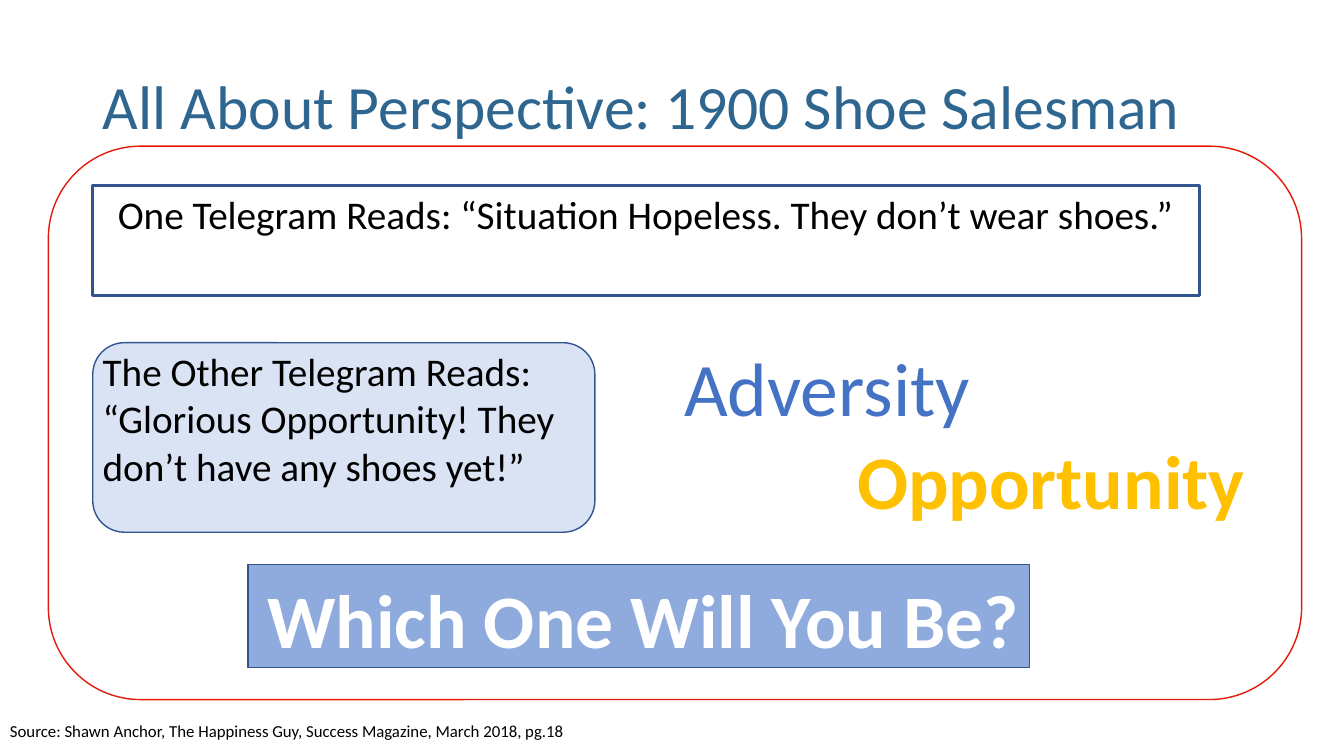
from pptx import Presentation
from pptx.dml.color import RGBColor
from pptx.enum.shapes import MSO_SHAPE as SHAPE
from pptx.enum.text import MSO_ANCHOR as ANCHOR, MSO_AUTO_SIZE as AUTO, PP_ALIGN as ALIGN
from pptx.util import Inches, Pt

BLACK = RGBColor(0x00, 0x00, 0x00)
WHITE = RGBColor(0xFF, 0xFF, 0xFF)
TEAL = RGBColor(0x2F, 0x66, 0x90)
NAVY = RGBColor(0x32, 0x54, 0x91)
BLUE = RGBColor(0x44, 0x72, 0xC4)
MID_BLUE = RGBColor(0x8F, 0xAA, 0xDC)
PALE_BLUE = RGBColor(0xDA, 0xE3, 0xF3)
GOLD = RGBColor(0xFF, 0xC0, 0x00)
RED = RGBColor(0xE5, 0x19, 0x09)


def add_panel(kind, box, fill, line, width):
    sp = s.shapes.add_shape(kind, *map(Inches, box))
    sp.shadow.inherit = False
    if fill is None:
        sp.fill.background()
    else:
        sp.fill.solid()
        sp.fill.fore_color.rgb = fill
    sp.line.color.rgb = line
    sp.line.width = Pt(width)


def set_text(sp, text, size, color, bold=False, align=ALIGN.LEFT):
    p = sp.text_frame.paragraphs[0]
    p.text = text
    p.alignment = align
    p.font.name = "Calibri"
    p.font.size = Pt(size)
    p.font.bold = bold
    p.font.color.rgb = color


prs = Presentation()
prs.slide_width = Inches(13.33)
prs.slide_height = Inches(7.5)
s = prs.slides.add_slide(prs.slide_layouts[5])

# Title
title = s.shapes.title
title.left, title.top, title.width, title.height = map(Inches, (0.92, 0.36, 11.5, 1.45))
title.text_frame.vertical_anchor = ANCHOR.MIDDLE
title.text_frame.auto_size = AUTO.NONE
set_text(title, "All About Perspective: 1900 Shoe Salesman", 44, TEAL)
title.text_frame.paragraphs[0].line_spacing = 0.9

# Panels: outer frame, question, second telegram, first telegram
for panel in (
    (SHAPE.ROUNDED_RECTANGLE, (0.48, 1.45, 12.43, 5.49), None, RED, 1),
    (SHAPE.RECTANGLE, (2.46, 5.6, 7.75, 1.02), MID_BLUE, NAVY, 1),
    (SHAPE.ROUNDED_RECTANGLE, (0.92, 3.4, 4.98, 1.88), PALE_BLUE, NAVY, 1),
    (SHAPE.RECTANGLE, (0.92, 1.84, 10.98, 1.09), None, NAVY, 2.25),
):
    add_panel(*panel)

# Telegrams and source line
for text, box, size in (
    ("One Telegram Reads: “Situation Hopeless. They don’t wear shoes.”",
     (1.07, 1.84, 10.98, 0.88), 28),
    ("The Other Telegram Reads: “Glorious Opportunity! They don’t have any shoes yet!”",
     (0.92, 3.4, 5.14, 1.82), 28),
    ("Source: Shawn Anchor, The Happiness Guy, Success Magazine, March 2018, pg.18",
     (0, 7.1, 9.86, 0.3), 12),
):
    sp = s.shapes.add_textbox(*map(Inches, box))
    sp.text_frame.word_wrap = True
    set_text(sp, text, size, BLACK)

# Large display words
for text, box, color, bold in (
    ("Adversity", (6.67, 3.33, 3.07, 1.01), BLUE, False),
    ("Opportunity ", (8.38, 4.26, 4.26, 1.01), GOLD, True),
    ("Which One Will You Be?", (2.51, 5.63, 7.74, 1.01), WHITE, True),
):
    sp = s.shapes.add_textbox(*map(Inches, box))
    sp.text_frame.word_wrap = False
    set_text(sp, text, 54, color, bold, ALIGN.CENTER)

prs.save("out.pptx")
